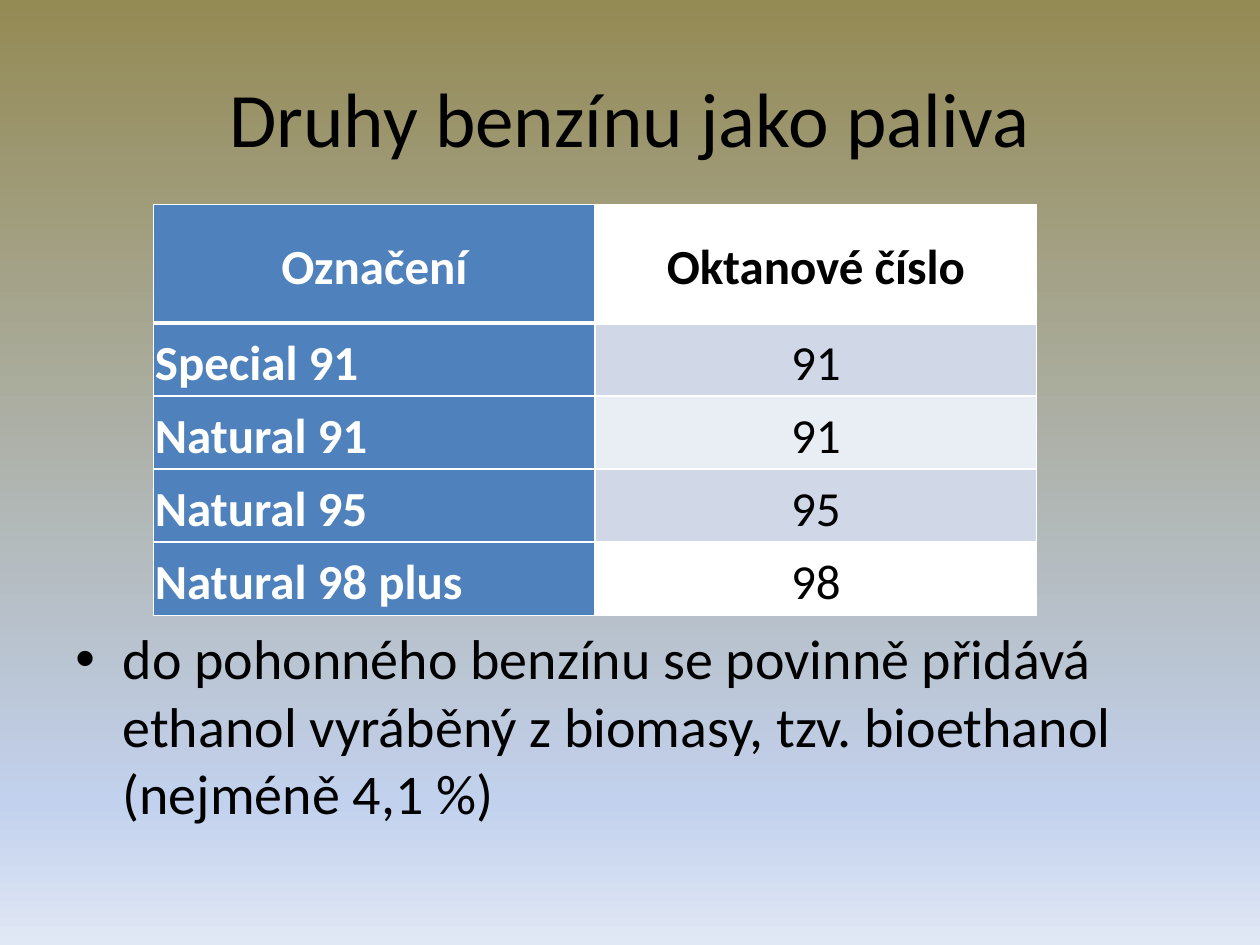
from copy import deepcopy

from lxml import etree
from pptx import Presentation
from pptx.dml.color import RGBColor
from pptx.enum.text import MSO_ANCHOR, PP_ALIGN
from pptx.oxml.ns import qn
from pptx.util import Pt

LEFT, CENTER = PP_ALIGN.LEFT, PP_ALIGN.CENTER
TOP, MIDDLE = MSO_ANCHOR.TOP, MSO_ANCHOR.MIDDLE
FONT = "Calibri"
COLORS = {
    "olive": "948A54",
    "sky": "C2D1ED",
    "pale_sky": "E1E8F5",
    "blue": "4F81BD",
    "band_dark": "D0D8E8",
    "band_light": "E9EDF4",
    "white": "FFFFFF",
    "black": "000000",
}
BACKGROUND_STOPS = [(0, "olive"), (0.85, "sky"), (1, "pale_sky")]
HEADINGS = ("Označení", "Oktanové číslo")
FUELS = [
    ("Special 91", "91", "band_dark"),
    ("Natural 91", "91", "band_light"),
    ("Natural 95", "95", "band_dark"),
    ("Natural 98 plus", "98", "white"),
]
CELL_FORMAT = {"vertical_anchor": MIDDLE, "margin_left": Pt(0.72), "margin_right": Pt(0.72),
               "margin_top": Pt(0.72), "margin_bottom": Pt(0.72)}


def rgb(color):
    return RGBColor.from_string(COLORS[color])


def apply(target, formats):
    for name, value in formats.items():
        setattr(target, name, value)


def paint_background(slide):
    fill = slide.background.fill
    fill.gradient()
    fill.gradient_angle = 270
    stop_list = slide.element.find(".//" + qn("a:gsLst"))
    stop_list.append(deepcopy(stop_list[-1]))
    for stop, (position, color) in zip(fill.gradient_stops, BACKGROUND_STOPS):
        stop.position = position
        stop.color.rgb = rgb(color)


def write(paragraph, text, size, color="black", bold=False, **formats):
    apply(paragraph, formats)
    run = paragraph.add_run()
    run.text = text
    apply(run.font, {"name": FONT, "size": Pt(size), "bold": bold})
    run.font.color.rgb = rgb(color)


def add_text(slide, box, text, size, anchor, align):
    frame = slide.shapes.add_textbox(*map(Pt, box)).text_frame
    apply(frame, {"word_wrap": True, "vertical_anchor": anchor})
    paragraph = frame.paragraphs[0]
    write(paragraph, text, size, alignment=align)
    return paragraph


def add_bullet(paragraph, indent):
    properties = paragraph._p.get_or_add_pPr()
    properties.set("marL", str(Pt(indent)))
    properties.set("indent", str(-Pt(indent)))
    etree.SubElement(properties, qn("a:buFont"), typeface="Arial")
    etree.SubElement(properties, qn("a:buChar"), char="•")


def add_borders(cell, widths):
    properties = cell._tc.get_or_add_tcPr()
    for side, width in widths.items():
        line = etree.SubElement(properties, qn("a:ln" + side), w=str(Pt(width)))
        solid = etree.SubElement(line, qn("a:solidFill"))
        etree.SubElement(solid, qn("a:srgbClr"), val=COLORS["white"])


def fill_cell(cell, text, fill, color, bold, align, top=1, bottom=1):
    apply(cell, CELL_FORMAT)
    add_borders(cell, {"L": 1, "R": 1, "T": top, "B": bottom})
    cell.fill.solid()
    cell.fill.fore_color.rgb = rgb(fill)
    write(cell.text_frame.paragraphs[0], text, 28, color, bold,
          alignment=align, line_spacing=1.15, space_after=Pt(10))


def add_fuel_table(slide):
    heights = [67.7] + [41.8] * len(FUELS)
    table = slide.shapes.add_table(len(heights), 2, Pt(87.8), Pt(116.8),
                                   Pt(504.6), Pt(sum(heights))).table
    for column in table.columns:
        column.width = Pt(252.3)
    for row, height in zip(table.rows, heights):
        row.height = Pt(height)

    # Header row, with a thick rule below
    for column, (heading, fill, color) in enumerate(
            zip(HEADINGS, ("blue", "white"), ("white", "black"))):
        fill_cell(table.cell(0, column), heading, fill, color, True, CENTER, bottom=3)

    # Fuel rows
    for row, (fuel, octane, band) in enumerate(FUELS, start=1):
        top = 3 if row == 1 else 1
        fill_cell(table.cell(row, 0), fuel, "blue", "white", True, LEFT, top)
        fill_cell(table.cell(row, 1), octane, band, "black", False, CENTER, top)


def main():
    presentation = Presentation()
    apply(presentation, {"slide_width": Pt(720), "slide_height": Pt(540)})
    slide = presentation.slides.add_slide(presentation.slide_layouts[6])
    paint_background(slide)

    # Title
    add_text(slide, (36, 21.6, 648, 90), "Druhy benzínu jako paliva", 44, MIDDLE, CENTER)

    # Note on bioethanol
    note = add_text(slide, (36, 353, 648, 129.4),
                    "do pohonného benzínu se povinně přidává ethanol vyráběný z biomasy, "
                    "tzv. bioethanol (nejméně 4,1 %)", 32, TOP, LEFT)
    add_bullet(note, 27)

    # Octane numbers
    add_fuel_table(slide)
    presentation.save("out.pptx")


if __name__ == "__main__":
    main()
